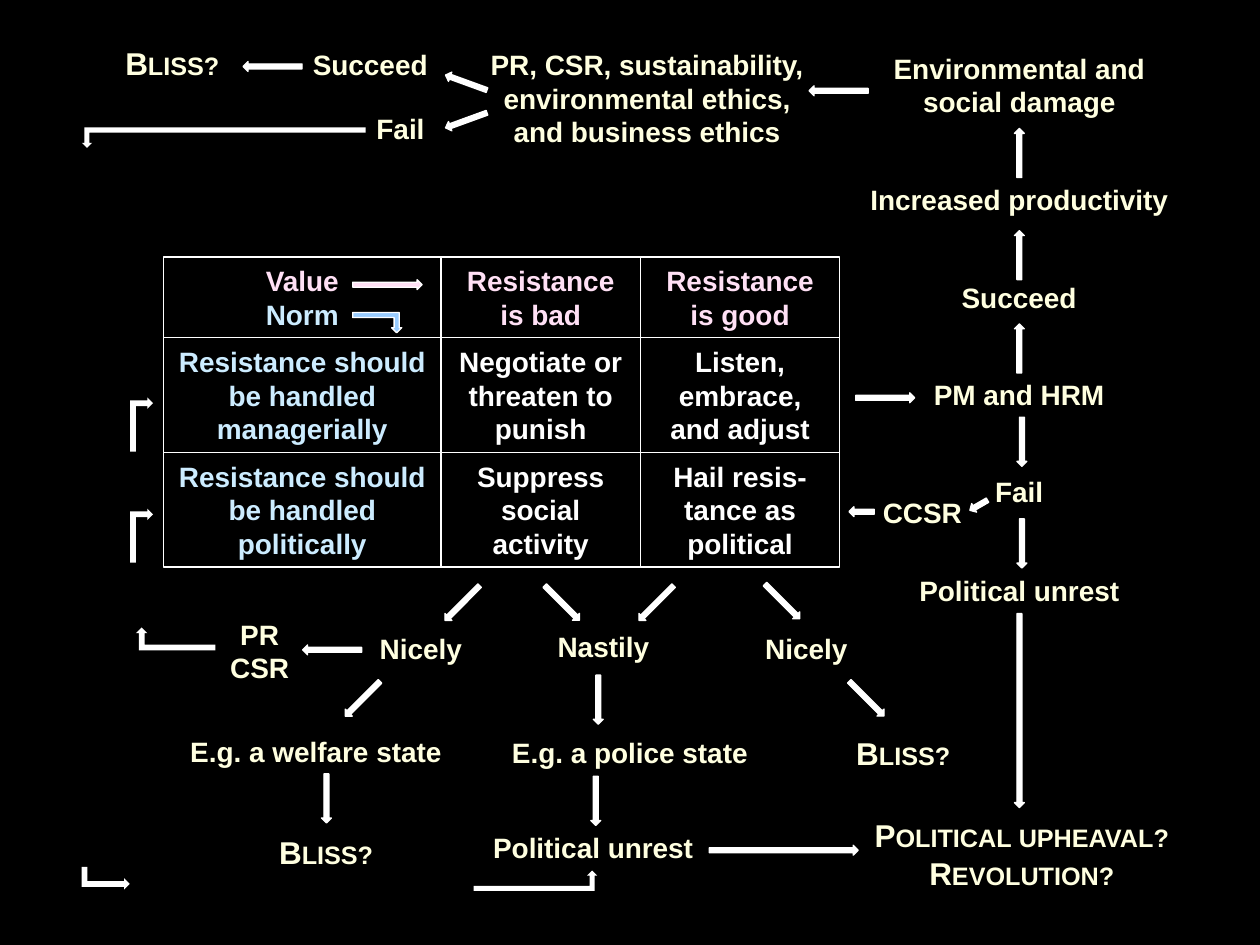
import pptx
import pptx.dml.color
import pptx.enum.shapes
import pptx.enum.text
import pptx.util
from pptx.util import Cm

RGBColor = pptx.dml.color.RGBColor
MSO_SHAPE = pptx.enum.shapes.MSO_SHAPE

BLACK = RGBColor(0x00, 0x00, 0x00)
WHITE = RGBColor(0xFF, 0xFF, 0xFF)
CREAM = RGBColor(0xFF, 0xFF, 0xE0)
PINK = RGBColor(0xFF, 0xE0, 0xF5)
PALE_BLUE = RGBColor(0xCC, 0xEC, 0xFF)
SKY_BLUE = RGBColor(0x99, 0xCC, 0xFF)

FONT = "Arial"
ARROW_THICKNESS = 0.2
NARROW, WIDE = 4.01, 6.6

MATRIX_LEFT, MATRIX_TOP = 3.3, 5.18
COLUMN_WIDTHS = (5.59, 4.02, 4.02)
ROW_HEIGHTS = (1.63, 2.31, 2.31)
MATRIX = (
    ("Value\nNorm", "Resistance is bad", "Resistance is good"),
    ("Resistance should be handled managerially",
     "Negotiate or threaten to punish", "Listen, embrace, and adjust"),
    ("Resistance should be handled politically",
     "Suppress social activity", "Hail resis-tance as political"),
)

# text, left, top, width, number of lines
LABELS = (
    ("Environmental and social damage", 17.25, 0.91, WIDE, 2),
    ("Increased productivity", 17.25, 3.56, WIDE, 1),
    ("Succeed", 18.54, 5.54, NARROW, 1),
    ("PM and HRM", 18.54, 7.49, NARROW, 1),
    ("Fail", 18.54, 9.45, NARROW, 1),
    ("CCSR", 16.59, 9.86, NARROW, 1),
    ("Political unrest", 17.25, 11.43, WIDE, 1),
    ("PR, CSR, sustainability, environmental ethics, and business ethics",
     9.55, 0.84, 6.99, 3),
    ("Succeed", 5.46, 0.84, NARROW, 1),
    ("Fail", 6.07, 2.13, NARROW, 1),
    ("PR\nCSR", 4.17, 12.32, 2.13, 2),
    ("Nicely", 6.48, 12.6, NARROW, 1),
    ("Nastily", 10.16, 12.57, NARROW, 1),
    ("Nicely", 14.25, 12.6, NARROW, 1),
    ("E.g. a welfare state", 3.07, 14.68, WIDE, 1),
    ("E.g. a police state", 9.4, 14.71, WIDE, 1),
    ("Political unrest", 8.66, 16.61, WIDE, 1),
)
OUTCOMES = (
    ("Bliss?", 1.47, 0.76, NARROW, 1),
    ("Bliss?", 4.57, 16.66, NARROW, 1),
    ("Bliss?", 14.91, 14.68, WIDE, 1),
    ("Political upheaval?\nRevolution?", 17.3, 16.33, WIDE, 2),
)

# left, top, length, rotation
HORIZONTAL_ARROWS = (
    (17.25, 7.92, 1.19, 0),
    (16.31, 1.73, 1.19, 180),
    (4.9, 1.24, 1.19, 180),
    (6.1, 13.0, 1.19, 180),
    (14.3, 17.04, 3.0, 0),
)
UPRIGHT_ARROWS = (
    (20.45, 6.53, 0.99, 0),
    (20.45, 4.65, 0.99, 0),
    (20.45, 2.59, 0.99, 0),
    (20.5, 8.41, 0.99, 180),
    (20.5, 10.46, 0.99, 180),
    (20.45, 12.37, 3.91, 180),
    (9.22, 11.66, 0.99, 225),
    (11.23, 11.66, 0.99, 135),
    (13.13, 11.66, 0.99, 225),
    (15.67, 11.63, 0.99, 135),
    (7.21, 13.59, 0.99, 225),
    (11.96, 13.61, 0.99, 180),
    (17.37, 13.59, 0.99, 135),
    (6.48, 15.6, 0.99, 180),
    (11.91, 15.65, 0.99, 180),
    (9.3, 1.98, 0.89, 250),
    (9.3, 1.22, 0.89, 290),
    (19.63, 9.98, 0.41, 240),
    (17.27, 10.06, 0.51, 270),
)
# left, top, width, height, rotation, flipped
BENT_ARROWS = (
    (1.65, 2.57, 5.72, 0.41, 180, False),
    (1.9, 17.22, 0.46, 0.97, 90, False),
    (9.55, 17.55, 2.49, 0.41, 0, False),
    (2.31, 8.33, 1.09, 0.46, 270, True),
    (2.31, 10.57, 1.09, 0.46, 270, True),
    (2.74, 12.65, 1.6, 0.46, 180, True),
)


def write_text(frame, text, size, colors, small_caps=False):
    """Fill the frame with one centred paragraph per line and colour."""
    frame.word_wrap = True
    frame.text = text
    for paragraph, color in zip(frame.paragraphs, colors):
        paragraph.alignment = pptx.enum.text.PP_ALIGN.CENTER
        font = paragraph.font
        font.name, font.size, font.bold = FONT, pptx.util.Pt(size), True
        font.color.rgb = color
        if small_caps:
            paragraph._p.pPr.find(pptx.oxml.ns.qn("a:defRPr")).set("cap", "small")


def add_label(slide, text, left, top, width, lines, size=16, small_caps=False):
    height = 0.26 + 0.0425 * size * lines
    box = slide.shapes.add_textbox(Cm(left), Cm(top), Cm(width), Cm(height))
    write_text(box.text_frame, text, size, (CREAM, CREAM), small_caps)
    box.text_frame.auto_size = pptx.enum.text.MSO_AUTO_SIZE.SHAPE_TO_FIT_TEXT


def add_outlined(slide, kind, left, top, width, height):
    shape = slide.shapes.add_shape(kind, Cm(left), Cm(top), Cm(width), Cm(height))
    shape.shadow.inherit = False
    shape.line.color.rgb = WHITE
    shape.line.width = pptx.util.Pt(0.75)
    return shape


def add_arrow(slide, kind, left, top, width, height, rotation=0, color=WHITE):
    arrow = add_outlined(slide, kind, left, top, width, height)
    arrow.fill.solid()
    arrow.fill.fore_color.rgb = color
    arrow.rotation = rotation
    return arrow


def flip_vertically(shape):
    shape._element.spPr.xfrm.set("flipV", "1")


def add_matrix(slide):
    for row, texts in enumerate(MATRIX):
        top = MATRIX_TOP + sum(ROW_HEIGHTS[:row])
        for column, text in enumerate(texts):
            left = MATRIX_LEFT + sum(COLUMN_WIDTHS[:column])
            cell = add_outlined(slide, MSO_SHAPE.RECTANGLE, left, top,
                                COLUMN_WIDTHS[column], ROW_HEIGHTS[row])
            cell.fill.background()
            if row == 0:
                colors = (PINK, PALE_BLUE)
            else:
                colors = (WHITE if column else PALE_BLUE,)
            write_text(cell.text_frame, text, 16, colors)
    add_arrow(slide, MSO_SHAPE.RIGHT_ARROW, 7.11, 5.64, 1.4, ARROW_THICKNESS, color=PINK)
    norm_arrow = add_arrow(slide, MSO_SHAPE.BENT_UP_ARROW, 7.11, 6.3, 0.99, 0.41,
                           color=SKY_BLUE)
    flip_vertically(norm_arrow)


def add_flow_arrows(slide):
    for left, top, length, rotation in HORIZONTAL_ARROWS:
        add_arrow(slide, MSO_SHAPE.RIGHT_ARROW, left, top, length, ARROW_THICKNESS, rotation)
    for left, top, length, rotation in UPRIGHT_ARROWS:
        add_arrow(slide, MSO_SHAPE.UP_ARROW, left, top, ARROW_THICKNESS, length, rotation)
    for *placement, flipped in BENT_ARROWS:
        arrow = add_arrow(slide, MSO_SHAPE.BENT_UP_ARROW, *placement)
        arrow.line.fill.background()
        if flipped:
            flip_vertically(arrow)


def main():
    deck = pptx.Presentation()
    deck.slide_width, deck.slide_height = Cm(25.4), Cm(19.05)
    slide = deck.slides.add_slide(deck.slide_layouts[6])
    slide.background.fill.solid()
    slide.background.fill.fore_color.rgb = BLACK
    add_matrix(slide)
    for label in LABELS:
        add_label(slide, *label)
    for outcome in OUTCOMES:
        add_label(slide, *outcome, size=18, small_caps=True)
    add_flow_arrows(slide)
    deck.save("out.pptx")


if __name__ == "__main__":
    main()
